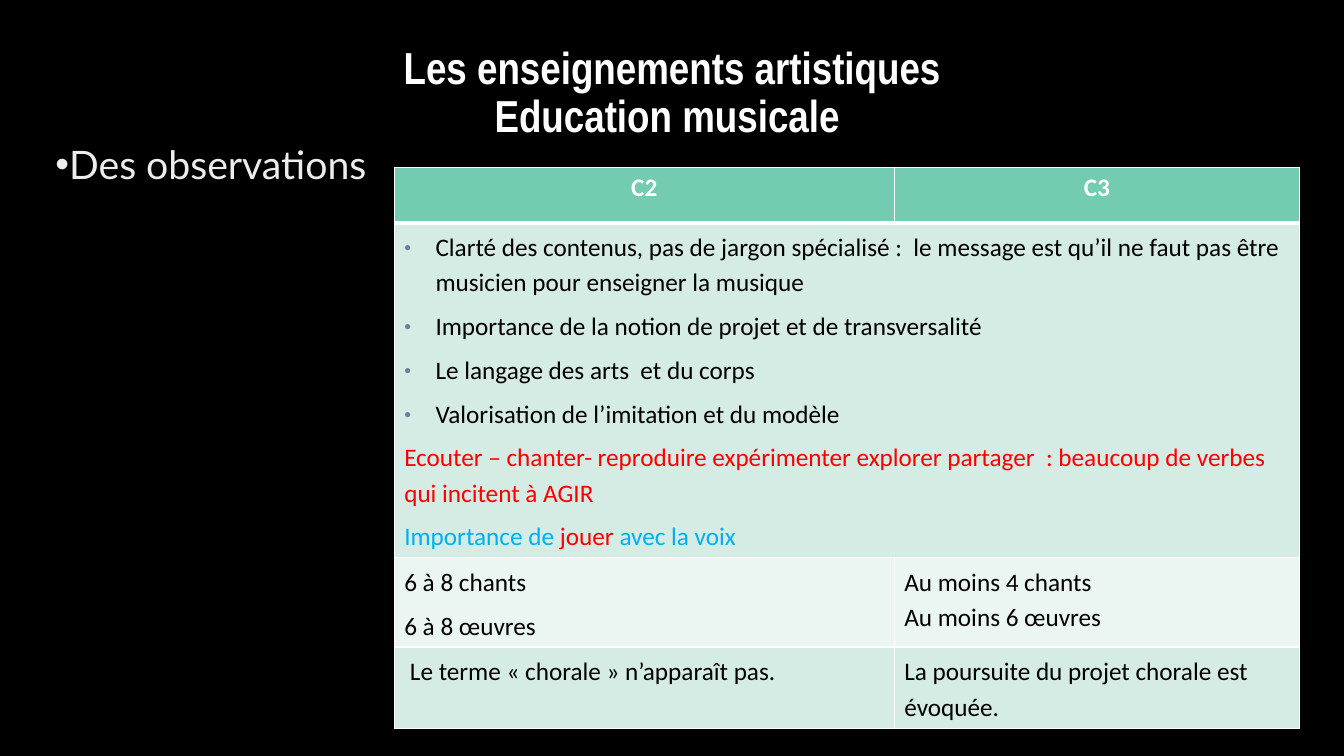
from pptx import Presentation
from pptx.dml.color import RGBColor
from pptx.enum.text import MSO_ANCHOR, PP_ALIGN
from pptx.util import Inches, Pt
from lxml import etree

CENTER, LEFT = PP_ALIGN.CENTER, PP_ALIGN.LEFT
MIDDLE, TOP = MSO_ANCHOR.MIDDLE, MSO_ANCHOR.TOP
NS = "http://schemas.openxmlformats.org/drawingml/2006/main"

BLACK, WHITE, RED, BLUE = "000000", "FFFFFF", "FF0000", "00B0F0"
MINT, PALE, LIGHT = "73CBB2", "D5ECE4", "EBF6F2"

# Content
TITLE = "Les enseignements artistiques\vEducation musicale "
BODY = "Des observations"
HEADS = ["C2", "C3"]
POINTS = [
    "Clarté des contenus, pas de jargon spécialisé :  le message est qu’il "
    "ne faut pas être musicien pour enseigner la musique",
    "Importance de la notion de projet et de transversalité",
    "Le langage des arts  et du corps",
    "Valorisation de l’imitation et du modèle",
]
VERBS = [("Ecouter – chanter- reproduire expérimenter explorer partager  : "
          "beaucoup de verbes qui incitent à AGIR", RED)]
VOICE = [("Importance de ", BLUE), ("jouer ", RED), ("avec la voix", BLUE)]
# Cell lines and the space before each later line
WORKS = [(["6 à 8 chants", "6 à 8 œuvres"], 6),
         (["Au moins 4 chants", "Au moins 6 œuvres"], 0)]
CHOIR = [([" Le terme «\u00a0chorale\u00a0» n’apparaît pas."], 0),
         (["La poursuite du projet chorale est évoquée."], 0)]
COLS = [4.96, 4.02]
ROWS = [0.55, 3.32, 0.88, 0.81]
FILLS = [MINT, PALE, LIGHT, PALE]


def color(code):
    return RGBColor.from_string(code)


def add(parent, tag, **attrs):
    return etree.SubElement(parent, f"{{{NS}}}{tag}", attrs)


def style(run, size, face, code, bold=False):
    font = run.font
    font.size, font.name, font.bold = Pt(size), face, bold
    font.color.rgb = color(code)


def place(shape, left, top, width, height):
    shape.left, shape.top = Inches(left), Inches(top)
    shape.width, shape.height = Inches(width), Inches(height)


def bullet(para):
    props = para._p.get_or_add_pPr()
    props.set("marL", str(Inches(0.31)))
    props.set("indent", str(-Inches(0.31)))
    add(add(props, "buClr"), "srgbClr", val="727CA3")
    add(props, "buSzPct", val="76000")
    add(props, "buFont", typeface="Arial")
    add(props, "buChar", char="•")


def write(cell, lines, gap=0, dots=0):
    """Fill a cell with lines of (text, colour) runs; the first dots get bullets."""
    frame = cell.text_frame
    for i, line in enumerate(lines):
        para = frame.add_paragraph() if i else frame.paragraphs[0]
        if i < dots:
            bullet(para)
        para.line_spacing = 1.15
        para.space_before = Pt(gap if i else 0)
        for text, code in line:
            run = para.add_run()
            run.text = text
            style(run, 18, "Calibri", code)


def border(cell, head):
    props = cell._tc.get_or_add_tcPr()
    for i, side in enumerate("LRTB"):
        width = Pt(3 if head and side == "B" else 1)
        line = add(props, "ln" + side, w=str(width))
        add(add(line, "solidFill"), "srgbClr", val=WHITE)
        props.insert(i, line)


def plain(text):
    return [(text, BLACK)]


# Slide
deck = Presentation()
deck.slide_width, deck.slide_height = Inches(13.33), Inches(7.5)
slide = deck.slides.add_slide(deck.slide_layouts[1])
back = slide.background.fill
back.solid()
back.fore_color.rgb = color(BLACK)

# Title and body
title, body = slide.shapes.title, slide.placeholders[1]
place(title, 0.92, 0.21, 11.5, 1.45)
place(body, 0.45, 1.39, 10.65, 5.4)
add(body.text_frame.paragraphs[0]._p.get_or_add_pPr(), "buNone")
for shape, text, anchor, align, look in [
    (title, TITLE, MIDDLE, CENTER, (32, "Arial Narrow", WHITE, True)),
    (body, BODY, TOP, LEFT, (28, "Lato", "EDEDED")),
]:
    frame = shape.text_frame
    frame.text, frame.vertical_anchor = text, anchor
    para = frame.paragraphs[0]
    para.alignment, para.line_spacing, para.space_before = align, 0.9, Pt(0)
    for run in para.runs:
        style(run, *look)
props = body.text_frame.paragraphs[0]._p.get_or_add_pPr()
props.set("marL", "0")
props.set("indent", "0")

# Table grid
table = slide.shapes.add_table(
    len(ROWS), len(COLS), Inches(3.91), Inches(1.66),
    Inches(sum(COLS)), Inches(sum(ROWS))).table
for col, width in zip(table.columns, COLS):
    col.width = Inches(width)
for r, (row, height, code) in enumerate(zip(table.rows, ROWS, FILLS)):
    row.height = Inches(height)
    for cell in row.cells:
        cell.fill.solid()
        cell.fill.fore_color.rgb = color(code)
        border(cell, r == 0)

# Table text
for c, head in enumerate(HEADS):
    cell = table.cell(0, c)
    cell.text_frame.text = head
    para = cell.text_frame.paragraphs[0]
    para.alignment = CENTER
    style(para.runs[0], 18, "Calibri", WHITE, True)
wide = table.cell(1, 0)
wide.merge(table.cell(1, 1))
write(wide, [plain(p) for p in POINTS] + [VERBS, VOICE], 6, len(POINTS))
for r, pair in enumerate([WORKS, CHOIR], 2):
    for c, (lines, gap) in enumerate(pair):
        write(table.cell(r, c), [plain(t) for t in lines], gap)

deck.save("out.pptx")
